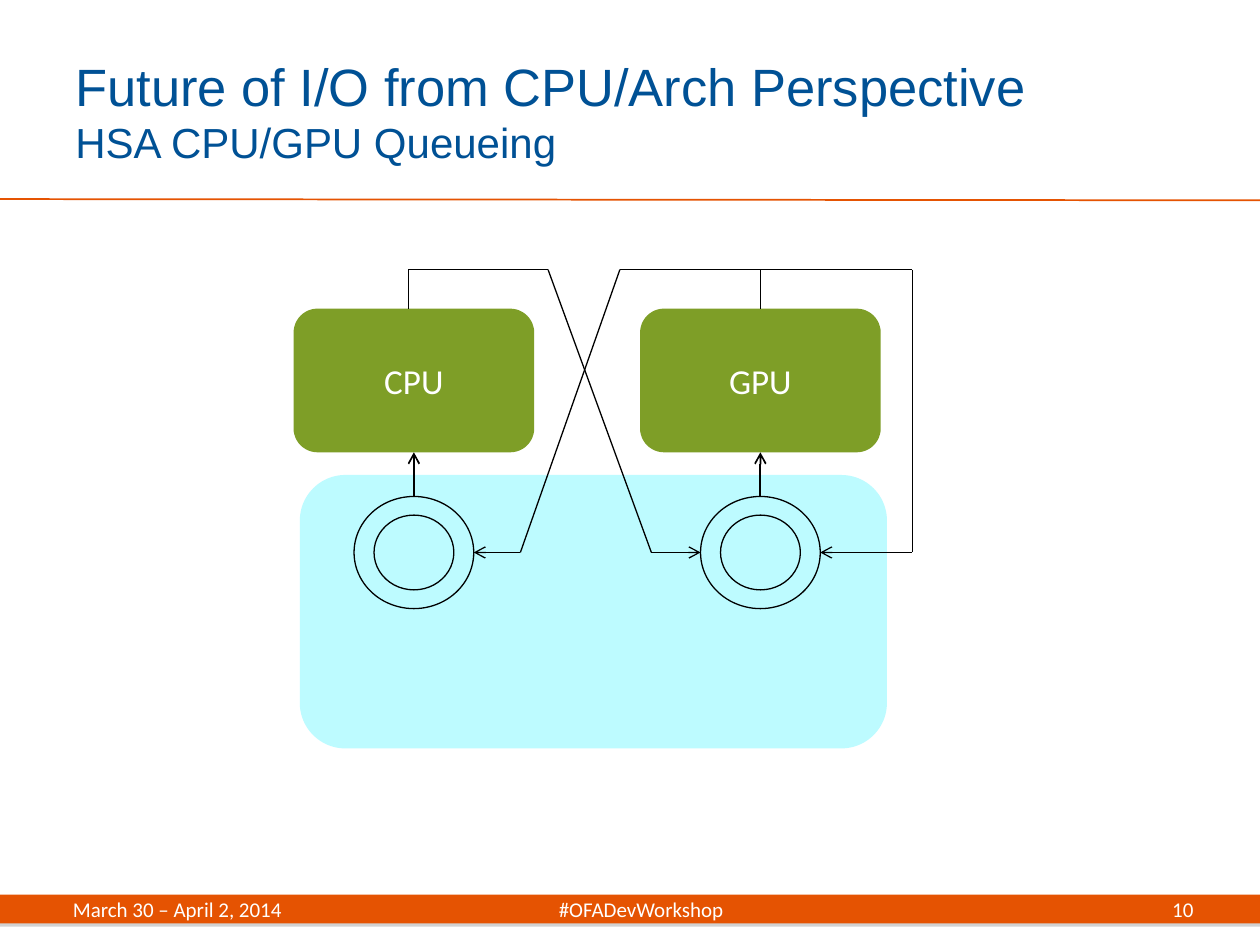
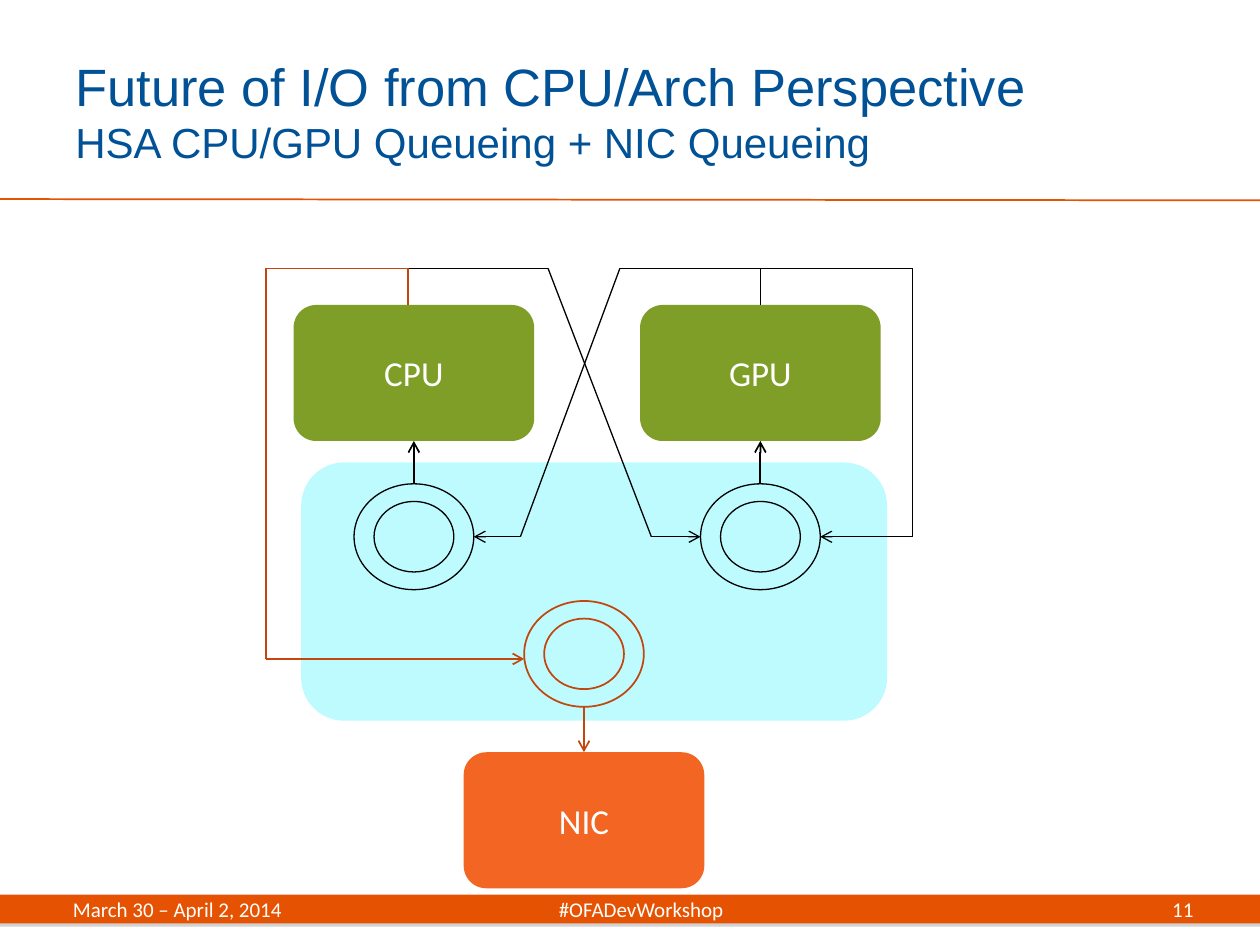
from dataclasses import dataclass

import lxml.etree
import pptx
import pptx.dml.color
import pptx.enum.shapes
import pptx.enum.text
import pptx.oxml
import pptx.oxml.ns
import pptx.util

Inches, Pt = pptx.util.Inches, pptx.util.Pt
RGB = pptx.dml.color.RGBColor
SHAPE = pptx.enum.shapes.MSO_SHAPE
ALIGN = pptx.enum.text.PP_ALIGN
MIDDLE = pptx.enum.text.MSO_ANCHOR.MIDDLE
qn = pptx.oxml.ns.qn

BLUE = RGB(0x00, 0x51, 0x95)
ORANGE = RGB(0xE5, 0x53, 0x02)
WHITE = RGB(0xFF, 0xFF, 0xFF)
BLACK = RGB(0x00, 0x00, 0x00)
CYAN = RGB(0xBD, 0xFB, 0xFF)
GREEN = RGB(0x7E, 0x9E, 0x27)
NIC_FILL = RGB(0xF2, 0x65, 0x22)
NIC_LINE = RGB(0xC3, 0x47, 0x0C)

TITLE = "Future of I/O from CPU/Arch Perspective"
FOOTER = "March 30 – April 2, 2014\t#OFADevWorkshop"
TITLE_FONT = {"name": "Arial", "color": BLUE}
FOOTER_FONT = {"name": "Calibri", "size": Pt(12), "color": WHITE}
UNIT_FONT = {"name": "Calibri", "size": Pt(20), "color": WHITE}

BAND_TOP, BAND_H = 7.1, 0.23
UNIT_W, RING_W = 1.91, 0.95
INNER_RATIO = 2 / 3
CPU_LEFT, GPU_LEFT = 2.33, 5.08
CPU_OUT_X, CROSS_LEFT, CROSS_RIGHT = 3.24, 4.35, 4.92
CPU_IN_X, GPU_IN_X, LOOP_X = 4.13, 5.17, 7.24

Point = tuple[float, float]
Box = tuple[float, float, float, float]


@dataclass(frozen=True)
class Stroke:
    color: RGB
    width: float


THIN = Stroke(BLACK, 0.75)
FEED = Stroke(BLACK, 1)
NIC_STROKE = Stroke(NIC_LINE, 1)


@dataclass(frozen=True)
class Unit:
    """A processor box and the queue ring that feeds it."""
    label: str
    left: float
    top: float
    height: float
    ring_top: float
    ring_h: float
    fill: RGB = GREEN
    ring: Stroke = THIN
    feed: Stroke = FEED

    @property
    def center_x(self) -> float:
        return self.left + UNIT_W / 2

    @property
    def ring_y(self) -> float:
        return self.ring_top + self.ring_h / 2

    @property
    def ring_left(self) -> float:
        return self.center_x - RING_W / 2

    @property
    def ring_right(self) -> float:
        return self.center_x + RING_W / 2


@dataclass(frozen=True)
class Diagram:
    subtitle: str
    number: int
    memory: Box
    bus_y: float
    cpu: Unit
    gpu: Unit
    nic: Unit | None = None


def set_font(font, values: dict) -> None:
    for key, value in values.items():
        if key == "color":
            font.color.rgb = value
        else:
            setattr(font, key, value)


def add_shape(s, kind, box: Box, fill: RGB | None = None, stroke: Stroke | None = None):
    sp = s.shapes.add_shape(kind, *map(Inches, box))
    sp.shadow.inherit = False
    if fill is None:
        sp.fill.background()
    else:
        sp.fill.solid()
        sp.fill.fore_color.rgb = fill
    if stroke is None:
        sp.line.fill.background()
    else:
        sp.line.color.rgb = stroke.color
        sp.line.width = Pt(stroke.width)
    return sp


def add_path(s, points: list[Point], stroke: Stroke, arrow: bool = False) -> None:
    """Join the points with straight connectors; an arrowhead goes on the last."""
    for start, end in zip(points, points[1:]):
        c = s.shapes.add_connector(pptx.enum.shapes.MSO_CONNECTOR.STRAIGHT,
                                   *map(Inches, start + end))
        c.line.color.rgb = stroke.color
        c.line.width = Pt(stroke.width)
        sp_pr = c._element.spPr
        if arrow and end == points[-1]:
            lxml.etree.SubElement(sp_pr.find(qn("a:ln")), qn("a:tailEnd"), type="arrow")
        lxml.etree.SubElement(sp_pr, qn("a:effectLst"))


def add_text_box(s, box: Box, inset_y: float):
    tf = s.shapes.add_textbox(*map(Inches, box)).text_frame
    tf.word_wrap = True
    tf.vertical_anchor = MIDDLE
    tf.margin_top = tf.margin_bottom = Inches(inset_y)
    return tf


def add_band(s) -> None:
    """Footer band with a grey shadow below it."""
    sp = add_shape(s, SHAPE.RECTANGLE, (0, BAND_TOP, 10, BAND_H), ORANGE)
    effects = sp._element.spPr.find(qn("a:effectLst"))
    shadow = lxml.etree.SubElement(effects, qn("a:outerShdw"), blurRad="0",
                                   dist=str(Pt(1.8)), dir="5400000",
                                   algn="t", rotWithShape="0")
    color = lxml.etree.SubElement(shadow, qn("a:srgbClr"), val="808080")
    lxml.etree.SubElement(color, qn("a:alpha"), val="35000")


def add_frame(s, subtitle: str, number: int) -> None:
    """Draw what every slide shares: band, rule, title and footer."""
    add_band(s)
    add_path(s, [(0, 1.58), (10, 1.59)], Stroke(ORANGE, 1))

    p = add_text_box(s, (0.5, 0.25, 8.17, 1.25), 0.05).paragraphs[0]
    for text, size in ((TITLE, 30), (subtitle, 24)):
        if p.runs:
            p.add_line_break()
        r = p.add_run()
        r.text = text
        set_font(r.font, TITLE_FONT | {"size": Pt(size)})

    p = add_text_box(s, (0.48, BAND_TOP, 9.05, BAND_H), 0).paragraphs[0]
    tabs = lxml.etree.SubElement(p._p.get_or_add_pPr(), qn("a:tabLst"))
    lxml.etree.SubElement(tabs, qn("a:tab"), pos=str(Inches(4.51)), algn="ctr")
    r = p.add_run()
    r.text = FOOTER
    set_font(r.font, FOOTER_FONT)

    p = add_text_box(s, (8.38, BAND_TOP, 1.19, BAND_H), 0).paragraphs[0]
    p.alignment = ALIGN.RIGHT
    r = p.add_run()
    r.text = str(number)
    set_font(r.font, FOOTER_FONT)


def add_unit(s, unit: Unit) -> None:
    sp = add_shape(s, SHAPE.ROUNDED_RECTANGLE,
                   (unit.left, unit.top, UNIT_W, unit.height), unit.fill)
    tf = sp.text_frame
    tf.margin_left = tf.margin_right = 0
    tf.vertical_anchor = MIDDLE
    p = tf.paragraphs[0]
    p.alignment = ALIGN.CENTER
    r = p.add_run()
    r.text = unit.label
    set_font(r.font, UNIT_FONT)

    for ratio in (INNER_RATIO, 1):
        w, h = RING_W * ratio, unit.ring_h * ratio
        add_shape(s, SHAPE.OVAL, (unit.center_x - w / 2, unit.ring_y - h / 2, w, h),
                  stroke=unit.ring)

    if unit.ring_top > unit.top:
        start, end = unit.ring_top, unit.top + unit.height
    else:
        start, end = unit.ring_top + unit.ring_h, unit.top
    add_path(s, [(unit.center_x, start), (unit.center_x, end)], unit.feed, arrow=True)


def add_queue_paths(s, d: Diagram) -> None:
    """Lines from each processor to the queues it writes to."""
    cpu, gpu, bus = d.cpu, d.gpu, d.bus_y
    add_path(s, [(gpu.center_x, gpu.top), (gpu.center_x, bus), (CROSS_RIGHT, bus),
                 (CPU_IN_X, cpu.ring_y), (cpu.ring_right, cpu.ring_y)], THIN, arrow=True)
    add_path(s, [(CPU_OUT_X, cpu.top), (CPU_OUT_X, bus), (CROSS_LEFT, bus),
                 (GPU_IN_X, gpu.ring_y), (gpu.ring_left, gpu.ring_y)], THIN, arrow=True)
    add_path(s, [(gpu.center_x, bus), (LOOP_X, bus), (LOOP_X, gpu.ring_y),
                 (gpu.ring_right, gpu.ring_y)], THIN, arrow=True)


def add_nic(s, d: Diagram, nic: Unit) -> None:
    left, entry_y = 2.11, 5.23
    add_path(s, [(CPU_OUT_X, d.cpu.top), (CPU_OUT_X, d.bus_y), (left, d.bus_y),
                 (left, entry_y), (nic.ring_left, entry_y)], NIC_STROKE, arrow=True)
    add_unit(s, nic)


def add_diagram(prs, d: Diagram) -> None:
    s = prs.slides.add_slide(prs.slide_layouts[6])
    add_frame(s, d.subtitle, d.number)
    add_shape(s, SHAPE.ROUNDED_RECTANGLE, d.memory, CYAN)
    add_unit(s, d.cpu)
    add_unit(s, d.gpu)
    add_queue_paths(s, d)
    if d.nic:
        add_nic(s, d, d.nic)


DIAGRAMS = [
    Diagram("HSA CPU/GPU Queueing", 10, (2.38, 3.77, 4.66, 2.17), 2.14,
            Unit("CPU", CPU_LEFT, 2.45, 1.14, 3.94, 0.89),
            Unit("GPU", GPU_LEFT, 2.45, 1.14, 3.94, 0.89)),
    Diagram("HSA CPU/GPU Queueing + NIC Queueing", 11, (2.39, 3.67, 4.65, 2.05), 2.13,
            Unit("CPU", CPU_LEFT, 2.42, 1.08, 3.84, 0.84),
            Unit("GPU", GPU_LEFT, 2.42, 1.08, 3.84, 0.84),
            Unit("NIC", 3.68, 5.97, 1.08, 4.77, 0.84,
                 NIC_FILL, NIC_STROKE, NIC_STROKE)),
]


def main() -> None:
    prs = pptx.Presentation()
    prs.slide_width, prs.slide_height = Inches(10), Inches(7.5)
    for d in DIAGRAMS:
        add_diagram(prs, d)
    prs.save("out.pptx")


if __name__ == "__main__":
    main()
